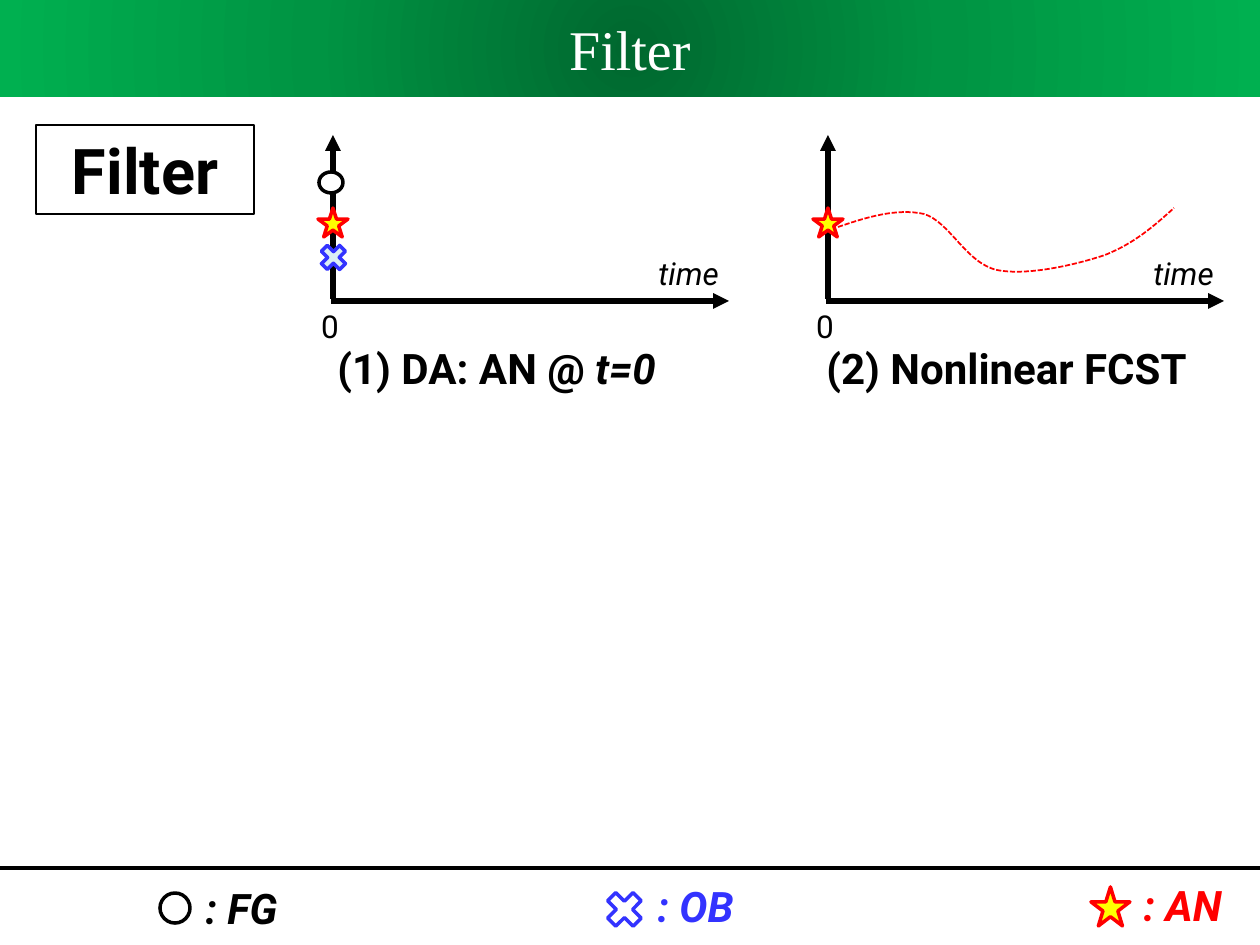
from dataclasses import dataclass

from lxml import etree
from pptx import Presentation
from pptx.dml.color import RGBColor
from pptx.enum.dml import MSO_LINE
from pptx.enum.shapes import MSO_CONNECTOR, MSO_SHAPE
from pptx.enum.text import MSO_ANCHOR, PP_ALIGN
from pptx.oxml import parse_xml
from pptx.oxml.ns import nsdecls, qn
from pptx.util import Pt

SCALE = 914400 / 126
RECT, OVAL = MSO_SHAPE.RECTANGLE, MSO_SHAPE.OVAL
CROSS, STAR = MSO_SHAPE.MATH_MULTIPLY, MSO_SHAPE.STAR_5_POINT
STRAIGHT = MSO_CONNECTOR.STRAIGHT
DASH = MSO_LINE.SQUARE_DOT
CENTER, MIDDLE = PP_ALIGN.CENTER, MSO_ANCHOR.MIDDLE


@dataclass(frozen=True)
class Theme:
    """Colours, fonts and type sizes of the slide."""
    black: str = "000000"
    white: str = "FFFFFF"
    blue: str = "3333FF"
    pale_blue: str = "DBEEF4"
    red: str = "FF0000"
    yellow: str = "FFFF00"
    band: tuple = ((0, "00682F"), (50, "009443"), (100, "00B050"))
    title_font: str = "Times New Roman"
    body_font: str = "Roboto"
    title: int = 32
    heading: int = 36
    label: int = 24
    axis: int = 18


T = Theme()


def px(*values):
    """Turn pixel lengths into EMU."""
    return [round(v * SCALE) for v in values]


def rgb(color):
    """Turn a hex string into a colour."""
    return RGBColor.from_string(color)


def add_run(p, text, size, color=T.black, font=T.body_font, bold=False, italic=False):
    """Add one formatted run to a paragraph."""
    r = p.add_run()
    r.text = text
    r.font.size, r.font.name = Pt(size), font
    r.font.bold, r.font.italic = bold, italic
    r.font.color.rgb = rgb(color)


def add_text(s, box, runs, inset=True):
    """Add an unwrapped text box; runs are (text, size, format) triples."""
    tf = s.shapes.add_textbox(*px(*box)).text_frame
    tf.word_wrap = False
    if not inset:
        tf.margin_left = tf.margin_right = 0
    for text, size, style in runs:
        add_run(tf.paragraphs[0], text, size, **style)


def add_mark(s, kind, box, fill, line, width=2):
    """Add a preset shape; without a fill colour it stays hollow."""
    sp = s.shapes.add_shape(kind, *px(*box))
    sp.shadow.inherit = False
    if fill:
        sp.fill.solid()
        sp.fill.fore_color.rgb = rgb(fill)
    else:
        sp.fill.background()
    sp.line.color.rgb = rgb(line)
    sp.line.width = Pt(width)
    return sp


def add_line(s, start, end, width, arrow=False):
    """Add a straight black line, with an arrowhead at its end if asked."""
    c = s.shapes.add_connector(STRAIGHT, *px(*start, *end))
    c.line.color.rgb = rgb(T.black)
    c.line.width = Pt(width)
    if arrow:
        etree.SubElement(c.line._get_or_add_ln(), qn("a:tailEnd"), type="triangle")
    etree.SubElement(c._element.spPr, qn("a:effectLst"))


def add_curve(s, start, controls):
    """Add a dashed curve; every three control points make one Bézier segment."""
    builder = s.shapes.build_freeform(*start, scale=SCALE)
    builder.add_line_segments(controls, close=False)
    sp = builder.convert_to_shape()
    sp.shadow.inherit = False
    sp.fill.background()
    sp.line.color.rgb = rgb(T.red)
    sp.line.width = Pt(1)
    sp.line.dash_style = DASH
    outline = next(sp._element.iter(qn("a:path")))
    steps = outline.findall(qn("a:lnTo"))
    for i in range(0, len(steps), 3):
        bezier = etree.SubElement(outline, qn("a:cubicBezTo"))
        for step in steps[i:i + 3]:
            bezier.append(step[0])
            outline.remove(step)


def add_title(s, text):
    """Turn the title placeholder into the green band."""
    sp = s.shapes.title
    sp.left, sp.top, sp.width, sp.height = px(0, 0, 1260, 97)
    stops = "".join(f'<a:gs pos="{pos * 1000}"><a:srgbClr val="{color}"/></a:gs>'
                    for pos, color in T.band)
    sp._element.spPr.append(parse_xml(
        f'<a:gradFill {nsdecls("a")} rotWithShape="1"><a:gsLst>{stops}</a:gsLst>'
        '<a:path path="circle"><a:fillToRect l="50000" t="50000" r="50000" b="50000"/>'
        '</a:path></a:gradFill>'))
    tf = sp.text_frame
    tf.vertical_anchor = MIDDLE
    p = tf.paragraphs[0]
    p.alignment = CENTER
    add_run(p, text, T.title, T.white, T.title_font)


def add_heading(s, text):
    """Add the framed heading at the left."""
    tf = add_mark(s, RECT, (36, 125, 218, 89), None, T.black, 1.5).text_frame
    tf.vertical_anchor = MIDDLE
    p = tf.paragraphs[0]
    p.alignment = CENTER
    add_run(p, text, T.heading, bold=True)


def add_axes(s, x):
    """Add the two axes of a panel with their labels, from its origin x."""
    add_line(s, (x, 299), (x, 135), 3, arrow=True)
    add_line(s, (x - 2, 301), (x + 396, 301), 3, arrow=True)
    add_text(s, (x + 313, 248, 88, 50), [("time", T.axis, {"italic": True})])
    add_text(s, (x - 12, 301, 16, 50), [("0", T.axis, {})], inset=False)


def add_analysis(s, x):
    """Add the analysis star on the vertical axis."""
    add_mark(s, STAR, (x - 15, 208, 30, 29), T.yellow, T.red)


def add_legend(s):
    """Add the legend below its rule."""
    add_line(s, (0, 868), (1260, 868), 2.25)
    entries = [
        (OVAL, (160, 893, 30, 30), T.white, T.black, ": FG", (193, 876, 101, 63)),
        (CROSS, (600, 885, 49, 49), T.white, T.blue, ": OB", (645, 874, 108, 63)),
        (STAR, (1091, 887, 39, 39), T.yellow, T.red, ": AN", (1131, 873, 112, 63)),
    ]
    for kind, box, fill, color, text, text_box in entries:
        add_mark(s, kind, box, fill, color)
        style = {"color": color, "bold": True, "italic": True}
        add_text(s, text_box, [(text, T.label, style)])


def main():
    """Build the slide and save it."""
    prs = Presentation()
    prs.slide_width, prs.slide_height = px(1260, 945)
    s = prs.slides.add_slide(prs.slide_layouts[5])
    bold = {"bold": True}
    add_title(s, "Filter")
    add_heading(s, "Filter")

    x = 333
    add_axes(s, x)
    add_mark(s, OVAL, (x - 14, 172, 24, 21), T.white, T.black)
    add_mark(s, CROSS, (x - 17, 240, 35, 35), T.pale_blue, T.blue)
    add_analysis(s, x)
    add_text(s, (325, 336, 374, 63), [("(1) DA: AN @", T.label, bold),
                                      (" t=0", T.label, {"bold": True, "italic": True})])

    x = 828
    add_axes(s, x)
    add_analysis(s, x)
    add_curve(s, (838, 227), [(867, 217), (897, 208), (924, 214),
                              (950, 222), (966, 263), (997, 270),
                              (1027, 276), (1075, 265), (1105, 255),
                              (1135, 243), (1154, 226), (1174, 208)])
    add_text(s, (814, 336, 399, 63), [("(2) Nonlinear FCST", T.label, bold)])
    add_legend(s)
    prs.save("out.pptx")


if __name__ == "__main__":
    main()
